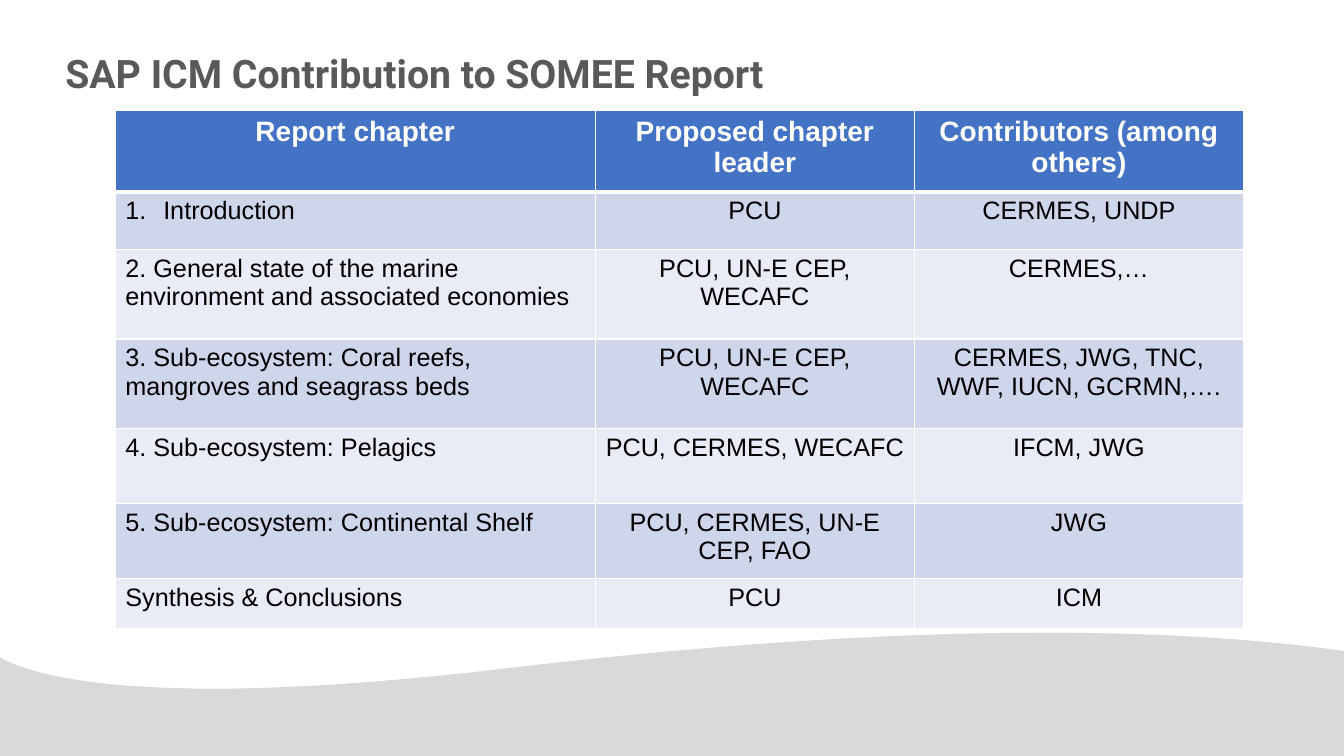
import pptx
import pptx.dml.color
import pptx.enum.text
import pptx.oxml
import pptx.oxml.ns
import pptx.util

Pt = pptx.util.Pt
RGBColor = pptx.dml.color.RGBColor
PP_ALIGN = pptx.enum.text.PP_ALIGN

WHITE = RGBColor(0xFF, 0xFF, 0xFF)
BLACK = RGBColor(0x00, 0x00, 0x00)
TITLE_GREY = RGBColor(0x59, 0x59, 0x59)
WAVE_GREY = RGBColor(0xD9, 0xD9, 0xD9)
HEADER_BLUE = RGBColor(0x44, 0x72, 0xC4)
BAND_DARK = RGBColor(0xCF, 0xD5, 0xEA)
BAND_LIGHT = RGBColor(0xE9, 0xEB, 0xF5)

CHAPTERS = [
    ("Report chapter", "Proposed chapter leader", "Contributors (among others)"),
    ("Introduction", "PCU", "CERMES, UNDP"),
    ("2. General state of the marine environment and associated economies",
     "PCU, UN-E CEP, WECAFC", "CERMES,…"),
    ("3. Sub-ecosystem: Coral reefs, mangroves and seagrass beds",
     "PCU, UN-E CEP, WECAFC", "CERMES, JWG, TNC, WWF, IUCN, GCRMN,…."),
    ("4. Sub-ecosystem: Pelagics", "PCU, CERMES, WECAFC", "IFCM, JWG"),
    ("5. Sub-ecosystem: Continental Shelf", "PCU, CERMES, UN-E CEP, FAO", "JWG"),
    ("Synthesis & Conclusions", "PCU", "ICM"),
]
COLUMN_WIDTHS = [342.7, 228.3, 234.7]
ROW_HEIGHTS = [58, 41, 64, 64, 53.5, 53.5, 36]
CURVES = [
    [(960, 465), (838.8, 447.8), (649.4, 443.5), (361.4, 477.4)],
    [(361.4, 477.4), (95.8, 509), (18.7, 481), (-1.4, 468.7)],
]
CURVE_STEPS = 30


def add_run(paragraph, text, font_name, size, color, bold):
    run = paragraph.add_run()
    run.text = text
    run.font.name = font_name
    run.font.size = Pt(size)
    run.font.color.rgb = color
    run.font.bold = bold


def set_borders(cell, top, bottom):
    properties = cell._tc.get_or_add_tcPr()
    widths = {"lnL": 1, "lnR": 1, "lnT": top, "lnB": bottom}
    for position, (side, width) in enumerate(widths.items()):
        border = pptx.oxml.parse_xml(
            f'<a:{side} {pptx.oxml.ns.nsdecls("a")} w="{Pt(width)}">'
            f'<a:solidFill><a:srgbClr val="{WHITE}"/></a:solidFill></a:{side}>')
        properties.insert(position, border)


presentation = pptx.Presentation()
presentation.slide_width = Pt(960)
presentation.slide_height = Pt(540)
slide = presentation.slides.add_slide(presentation.slide_layouts[6])

wave_points = []
for p0, p1, p2, p3 in CURVES:
    for step in range(1, CURVE_STEPS + 1):
        t = step / CURVE_STEPS
        wave_points.append(tuple(
            Pt((1 - t) ** 3 * a + 3 * (1 - t) ** 2 * t * b + 3 * (1 - t) * t ** 2 * c + t ** 3 * d)
            for a, b, c, d in zip(p0, p1, p2, p3)))
wave_points += [(Pt(-1.4), Pt(540)), (Pt(960), Pt(540))]
outline = slide.shapes.build_freeform(Pt(960), Pt(465))
outline.add_line_segments(wave_points, close=True)
wave = outline.convert_to_shape()
wave.shadow.inherit = False
wave.fill.solid()
wave.fill.fore_color.rgb = WAVE_GREY
wave.line.fill.background()

title = slide.shapes.add_textbox(Pt(39.6), Pt(25.2), Pt(633), Pt(46.8)).text_frame
title.word_wrap = True
heading = title.paragraphs[0]
heading.line_spacing = Pt(40)
heading.space_after = Pt(4)
add_run(heading, "SAP ICM Contribution to SOMEE Report", "Roboto", 28, TITLE_GREY, True)

chapter_table = slide.shapes.add_table(
    len(CHAPTERS), len(COLUMN_WIDTHS), Pt(82.4), Pt(79.2),
    Pt(sum(COLUMN_WIDTHS)), Pt(sum(ROW_HEIGHTS))).table
for column, width in zip(chapter_table.columns, COLUMN_WIDTHS):
    column.width = Pt(width)
for row, height in zip(chapter_table.rows, ROW_HEIGHTS):
    row.height = Pt(height)

for row_index, chapter in enumerate(CHAPTERS):
    is_header = row_index == 0
    band = HEADER_BLUE if is_header else (BAND_LIGHT, BAND_DARK)[row_index % 2]
    for column_index, text in enumerate(chapter):
        cell = chapter_table.cell(row_index, column_index)
        cell.fill.solid()
        cell.fill.fore_color.rgb = band
        set_borders(cell, 3 if row_index == 1 else 1, 3 if is_header else 1)
        entry = cell.text_frame.paragraphs[0]
        centred = is_header or column_index > 0
        entry.alignment = PP_ALIGN.CENTER if centred else PP_ALIGN.LEFT
        if text == "Introduction":
            numbering = entry._p.get_or_add_pPr()
            numbering.set("marL", str(Pt(27)))
            numbering.set("indent", str(Pt(-27)))
            numbering.append(pptx.oxml.parse_xml(
                f'<a:buAutoNum {pptx.oxml.ns.nsdecls("a")} type="arabicPeriod"/>'))
        add_run(entry, text, "Arial", 20 if is_header else 18,
                WHITE if is_header else BLACK, is_header)

presentation.save("out.pptx")
